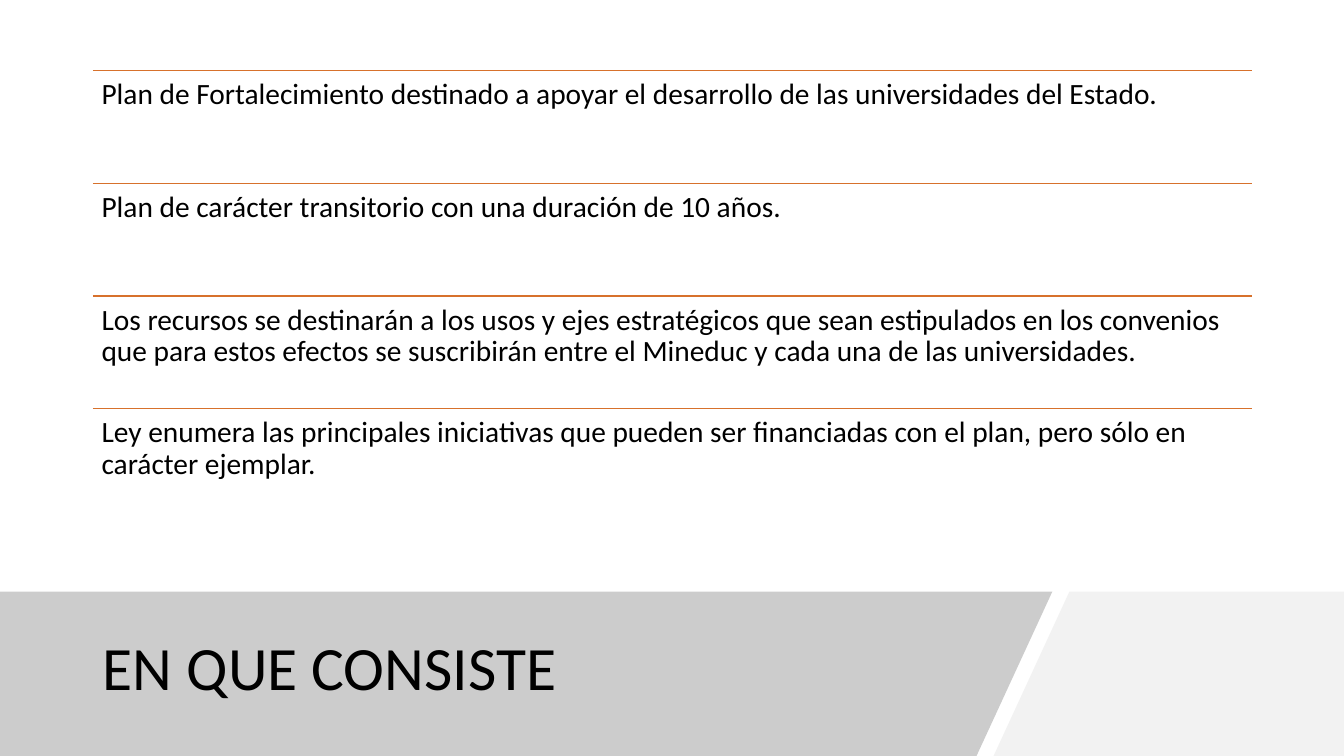
from lxml.etree import SubElement
from pptx import Presentation
from pptx.dml.color import RGBColor
from pptx.enum.shapes import MSO_CONNECTOR
from pptx.enum.text import MSO_ANCHOR, MSO_AUTO_SIZE, PP_ALIGN
from pptx.oxml.ns import qn
from pptx.util import Cm, Pt

COLORS = {"light": "F2F2F2", "grey": "808080", "rule": "D7712C", "text": "000000"}
POINTS = [
    "Plan de Fortalecimiento destinado a apoyar el desarrollo de las universidades del Estado.",
    "Plan de carácter transitorio con una duración de 10 años.",
    "Los recursos se destinarán a los usos y ejes estratégicos que sean estipulados en los "
    "convenios que para estos efectos se suscribirán entre el Mineduc y cada una de las universidades.",
    "Ley enumera las principales iniciativas que pueden ser financiadas con el plan, "
    "pero sólo en carácter ejemplar.",
]
WIDTH, HEIGHT = 33.87, 19.05
BAND_TOP = 14.91
LEFT, TEXT_WIDTH = 2.34, 29.21
FIRST_TOP, ROW_HEIGHT = 1.78, 2.84


def add_band(corners, color):
    start, *others = [(Cm(x), Cm(y)) for x, y in corners]
    builder = page.shapes.build_freeform(*start)
    builder.add_line_segments(others, close=True)
    band = builder.convert_to_shape()
    band.shadow.inherit = False
    band.fill.solid()
    band.fill.fore_color.rgb = RGBColor.from_string(color)
    band.line.fill.background()
    return band


def write_text(frame, text, size):
    frame.word_wrap = True
    frame.auto_size = MSO_AUTO_SIZE.NONE
    frame.text = text
    para = frame.paragraphs[0]
    para.alignment = PP_ALIGN.LEFT
    para.line_spacing = 0.9
    span = para.runs[0]
    span.font.name = "Calibri"
    span.font.size = Pt(size)
    span.font.color.rgb = RGBColor.from_string(COLORS["text"])


deck = Presentation()
deck.slide_width, deck.slide_height = Cm(WIDTH), Cm(HEIGHT)
page = deck.slides.add_slide(deck.slide_layouts[5])

# Slanted bands along the bottom
add_band([(26.95, BAND_TOP), (WIDTH, BAND_TOP), (WIDTH, HEIGHT), (25.04, HEIGHT)],
         COLORS["light"])
title_band = add_band([(-0.05, BAND_TOP), (26.52, BAND_TOP), (24.61, HEIGHT), (-0.05, HEIGHT)],
                      COLORS["grey"])
band_color = title_band.element.spPr.find(qn("a:solidFill"))[0]
SubElement(band_color, qn("a:alpha"), val="40000")

# Title, brought in front of the bands
title = page.shapes.title
title.left, title.top, title.width, title.height = Cm(LEFT), Cm(15.37), Cm(22.43), Cm(3.05)
title.text_frame.vertical_anchor = MSO_ANCHOR.MIDDLE
write_text(title.text_frame, "EN QUE CONSISTE", 44)
title.element.getparent().append(title.element)

# Points, each under its own rule
for index, point in enumerate(POINTS):
    top = Cm(FIRST_TOP + index * ROW_HEIGHT)
    rule = page.shapes.add_connector(MSO_CONNECTOR.STRAIGHT, Cm(LEFT), top,
                                     Cm(LEFT + TEXT_WIDTH), top)
    rule.line.color.rgb = RGBColor.from_string(COLORS["rule"])
    rule.line.width = Pt(1)
    SubElement(rule.element.spPr, qn("a:effectLst"))

    box = page.shapes.add_textbox(Cm(LEFT), top, Cm(TEXT_WIDTH), Cm(ROW_HEIGHT))
    frame = box.text_frame
    frame.margin_left = frame.margin_right = Cm(0.22)
    frame.margin_top = frame.margin_bottom = Cm(0.22)
    write_text(frame, point, 21)

deck.save("out.pptx")
